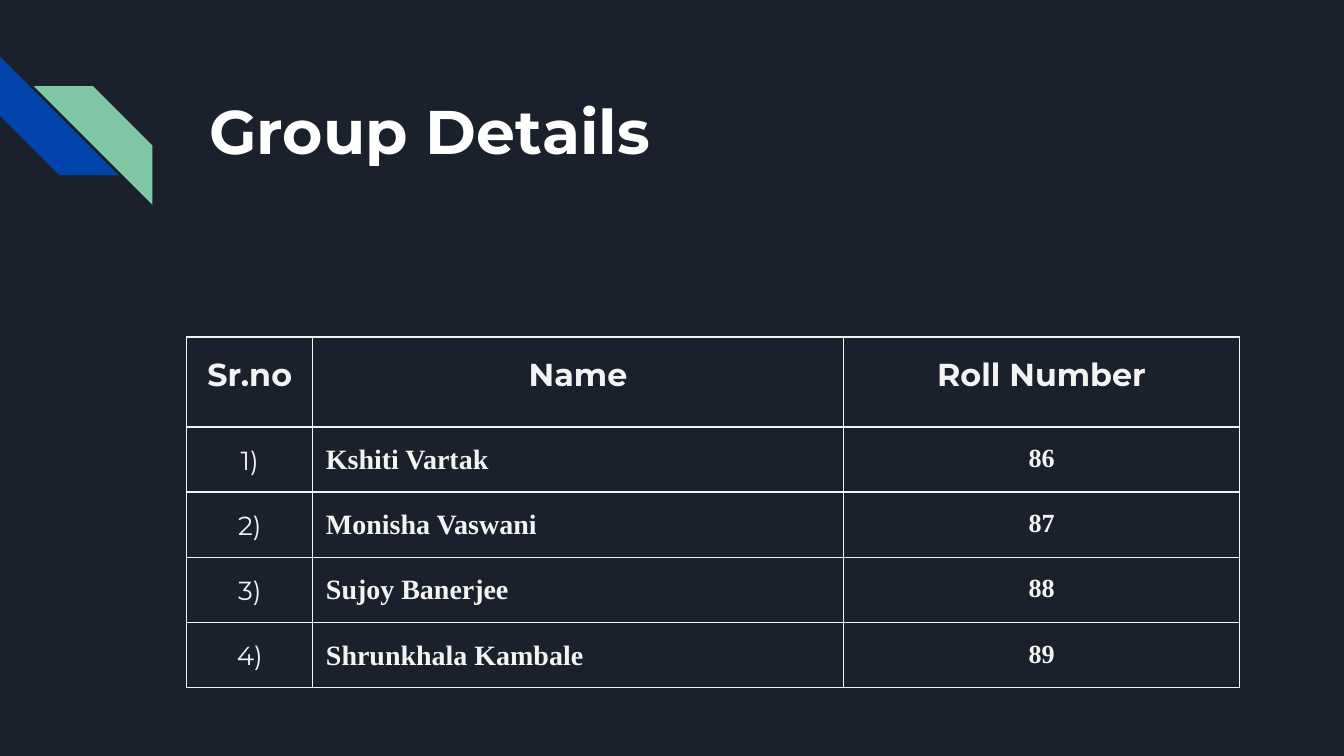
"""Build the Group Details slide with its table of members."""
from dataclasses import dataclass

from lxml.etree import SubElement
from pptx import Presentation
from pptx.dml.color import RGBColor
from pptx.enum.shapes import MSO_SHAPE as Preset
from pptx.enum.text import MSO_ANCHOR as Anchor, PP_ALIGN as Align
from pptx.oxml.ns import qn
from pptx.util import Cm, Pt


@dataclass(frozen=True)
class Theme:
    night: str = "1B212C"
    blue: str = "0145AC"
    green: str = "82C7A5"
    white: str = "FFFFFF"
    pale: str = "F3F3F3"
    sans: str = "Montserrat"
    serif: str = "Times New Roman"
    title: int = 33
    heading: int = 17
    name: int = 15
    number: int = 14
    border: float = 0.75


theme = Theme()


def write(frame, text, *, size, font=theme.sans, color=theme.pale, bold=True,
          align=Align.LEFT, spacing=1.15):
    frame.word_wrap = True
    paragraph = frame.paragraphs[0]
    paragraph.alignment = align
    paragraph.line_spacing = spacing
    run = paragraph.add_run()
    run.text = text
    run.font.size = Pt(size)
    run.font.name = font
    run.font.bold = bold
    run.font.color.rgb = RGBColor.from_string(color)


def draw_borders(cell):
    properties = cell._tc.get_or_add_tcPr()
    for position, side in enumerate(("lnL", "lnR", "lnT", "lnB")):
        line = SubElement(properties, qn(f"a:{side}"), w=str(Pt(theme.border)))
        fill = SubElement(line, qn("a:solidFill"))
        SubElement(fill, qn("a:srgbClr"), val=theme.pale)
        properties.insert(position, line)


deck = Presentation()
deck.slide_width, deck.slide_height = Cm(25.4), Cm(14.29)
slide = deck.slides.add_slide(deck.slide_layouts[6])
slide.background.fill.solid()
slide.background.fill.fore_color.rgb = RGBColor.from_string(theme.night)

for left, top, turn, color in ((0, 1.07, 270, theme.blue), (0.64, 1.63, 90, theme.green)):
    stripe = slide.shapes.add_shape(
        Preset.DIAGONAL_STRIPE, Cm(left), Cm(top), Cm(2.24), Cm(2.24))
    stripe.rotation = turn
    stripe.shadow.inherit = False
    stripe.fill.solid()
    stripe.fill.fore_color.rgb = RGBColor.from_string(color)
    stripe.line.fill.background()

inset = Cm(0.25)
title = slide.shapes.add_textbox(Cm(3.71), Cm(1.5), Cm(19.56), Cm(2.54)).text_frame
title.margin_left = title.margin_right = title.margin_top = title.margin_bottom = inset
title.vertical_anchor = Anchor.TOP
write(title, "Group Details", size=theme.title, color=theme.white, spacing=1)

members = ("Kshiti Vartak", "Monisha Vaswani", "Sujoy Banerjee", "Shrunkhala Kambale")
rows = [("Sr.no", "Name", "Roll Number")]
rows += [(f"{order})", member, str(85 + order)) for order, member in enumerate(members, 1)]

heading_style = dict(size=theme.heading, align=Align.CENTER)
member_styles = (
    dict(size=theme.number, bold=False, align=Align.CENTER),
    dict(size=theme.name, font=theme.serif),
    dict(size=theme.number, font=theme.serif, align=Align.CENTER),
)
widths = (2.38, 10.03, 7.49)
heights = (1.7,) + (1.2,) * len(members)

group = slide.shapes.add_table(
    len(rows), len(widths), Cm(3.53), Cm(6.37), Cm(sum(widths)), Cm(sum(heights))).table
group.first_row = group.horz_banding = False
for column, width in zip(group.columns, widths):
    column.width = Cm(width)

for r, (row, height) in enumerate(zip(rows, heights)):
    group.rows[r].height = Cm(height)
    for c, text in enumerate(row):
        cell = group.cell(r, c)
        cell.margin_left = cell.margin_right = cell.margin_top = cell.margin_bottom = inset
        cell.vertical_anchor = Anchor.TOP
        cell.fill.background()
        draw_borders(cell)
        write(cell.text_frame, text, **(member_styles[c] if r else heading_style))

deck.save("out.pptx")
